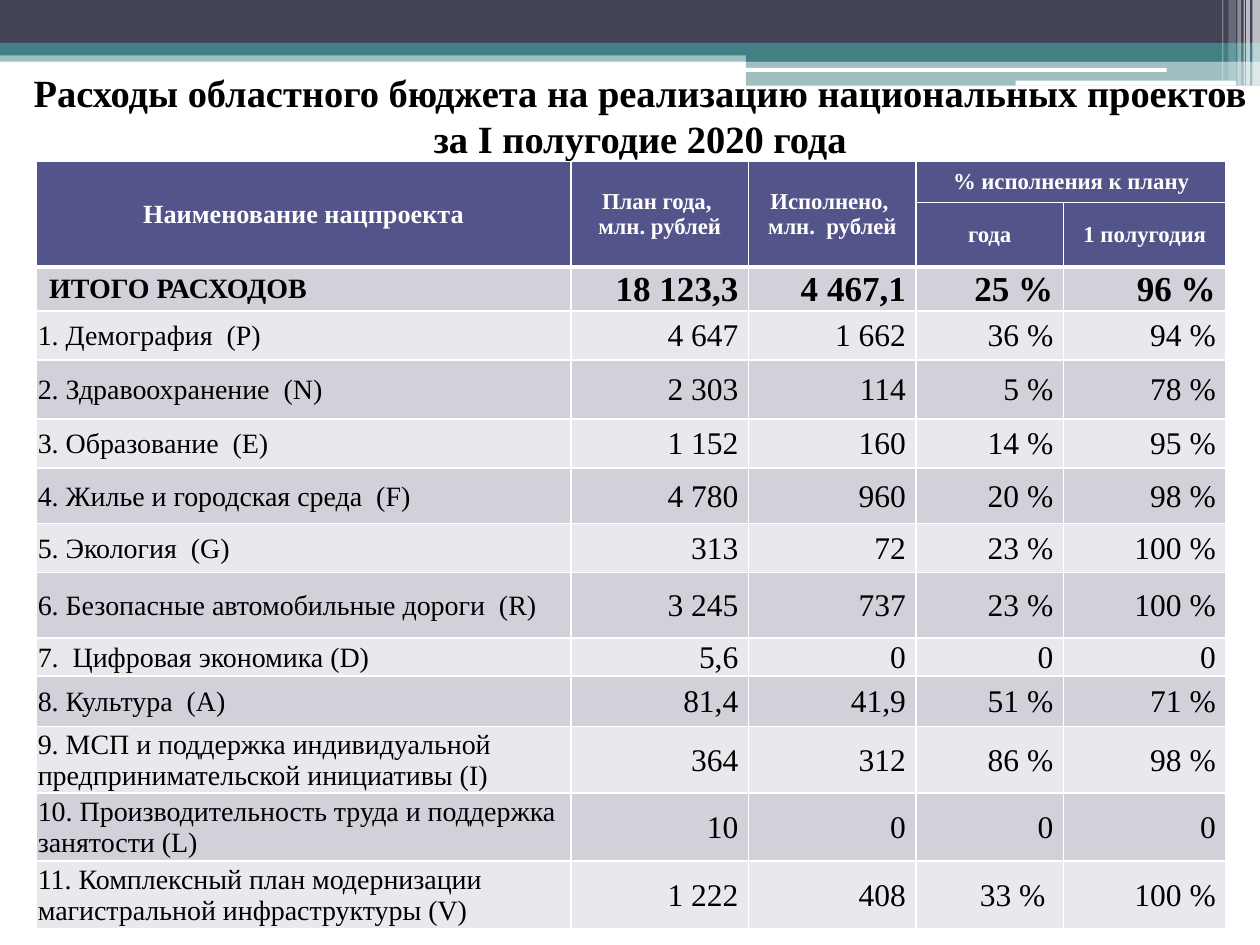
from lxml import etree
from pptx import Presentation
from pptx import util as u
from pptx.dml.color import RGBColor
from pptx.enum import shapes, text
from pptx.oxml import ns

FONT = "Times New Roman"
COLORS = {
    "navy": "424456", "teal": "438086", "white": "FFFFFF", "black": "000000",
    "header": "53548A", "dark": "D1D1DA", "light": "E9E9ED",
}

# left, top, width, height, colour, opacity in percent
BANDS = [
    (0, 0.4, 10, 0.09, "teal", 50),
    (0, 0, 10, 0.34, "navy", 100),
    (0, 0.34, 10, 0.1, "teal", 100),
    (5.92, 0.39, 4.08, 0.1, "teal", 100),
    (5.92, 0.48, 4.08, 0.2, "teal", 50),
]
PILLS = [
    (5.91, 0.54, 3.35, 0.03, "white", 100),
    (8.06, 0.64, 1.75, 0.04, "white", 100),
]
STRIPES = [
    (9.94, 0, 0.06, 0.68, "white", 65),
    (9.89, 0, 0.03, 0.68, "white", 65),
    (9.87, 0, 0.01, 0.68, "white", 60),
    (9.82, 0, 0.03, 0.68, "white", 40),
    (9.75, 0, 0.06, 0.64, "white", 20),
    (9.7, 0, 0.01, 0.64, "white", 30),
]

TITLE = ["Расходы областного бюджета на реализацию национальных проектов",
         "за I полугодие 2020 года"]
COL_WIDTHS = [4.24, 1.41, 1.33, 1.17, 1.29]
ROW_HEIGHTS = [0.33, 0.51, 0.34, 0.39, 0.47, 0.39, 0.44, 0.39, 0.52, 0.3,
               0.4, 0.53, 0.54, 0.54]
HEADER = [
    ["Наименование нацпроекта", "План года, \nмлн. рублей",
     "Исполнено, \nмлн.  рублей", "% исполнения к плану", ""],
    ["", "", "", "года", "1 полугодия"],
]
MERGES = [((0, 0), (1, 0)), ((0, 1), (1, 1)), ((0, 2), (1, 2)), ((0, 3), (0, 4))]
TOTAL = ["ИТОГО РАСХОДОВ", "18 123,3", "4 467,1", "25 %", "96 %"]
PROJECTS = [
    ["1. Демография  (P)", "4 647", "1 662", "36 %", "94 %"],
    ["2. Здравоохранение  (N)", "2 303", "114", "5 %", "78 %"],
    ["3. Образование  (E)", "1 152", "160", "14 %", "95 %"],
    ["4. Жилье и городская среда  (F)", "4 780", "960", "20 %", "98 %"],
    ["5. Экология  (G)", "313", "72", "23 %", "100 %"],
    ["6. Безопасные автомобильные дороги  (R)", "3 245", "737", "23 %", "100 %"],
    ["7.  Цифровая экономика (D)", "5,6", "0", "0", "0"],
    ["8. Культура  (A)", "81,4", "41,9", "51 %", "71 %"],
    ["9. МСП и поддержка индивидуальной предпринимательской инициативы (I)",
     "364", "312", "86 %", "98 %"],
    ["10. Производительность труда и поддержка занятости (L)",
     "10", "0", "0", "0"],
    ["11. Комплексный план модернизации магистральной инфраструктуры (V)",
     "1 222", "408", "33 % ", "100 %"],
]


def rgb(name):
    return RGBColor.from_string(COLORS[name])


def format_text(tf, size, bold, color, align, insets):
    """Apply one look to every paragraph of a text frame or cell."""
    for p in tf.paragraphs:
        p.alignment = align
        for font in [p.font] + [r.font for r in p.runs]:
            values = {"name": FONT, "size": u.Pt(size), "bold": bold}
            for key, value in values.items():
                setattr(font, key, value)
            font.color.rgb = rgb(color)
    return dict(zip(("margin_left", "margin_top", "margin_right", "margin_bottom"),
                    map(u.Inches, insets)))


def set_attributes(target, values):
    for key, value in values.items():
        setattr(target, key, value)


def add_decor(s, parts, kind):
    """Place borderless shapes, translucent where opacity is below 100."""
    for left, top, width, height, color, opacity in parts:
        sp = s.shapes.add_shape(kind, *map(u.Inches, (left, top, width, height)))
        sp.shadow.inherit = False
        sp.fill.solid()
        sp.fill.fore_color.rgb = rgb(color)
        sp.line.fill.background()
        if opacity < 100:
            clr = sp.element.spPr.find(".//" + ns.qn("a:srgbClr"))
            etree.SubElement(clr, ns.qn("a:alpha"), val=str(opacity * 1000))


def add_title(s, left, top, width, height):
    sp = s.shapes.title
    box = map(u.Inches, (left, top, width, height))
    set_attributes(sp, dict(zip(("left", "top", "width", "height"), box)))
    tf = sp.text_frame
    tf.text = "\n".join(TITLE)
    set_attributes(tf, {"word_wrap": True, "auto_size": text.MSO_AUTO_SIZE.NONE,
                        "vertical_anchor": text.MSO_ANCHOR.MIDDLE})
    set_attributes(tf, format_text(tf, 22, True, "black", text.PP_ALIGN.CENTER,
                                   (0.1, 0.05, 0.1, 0.05)))
    # Bring the title in front of the bands
    sp.element.getparent().append(sp.element)


def set_borders(cell, widths):
    tc_pr = cell._tc.get_or_add_tcPr()
    for side, width in zip("LRTB", widths):
        ln = etree.SubElement(tc_pr, ns.qn(f"a:ln{side}"), w=str(u.Pt(width)))
        fill = etree.SubElement(ln, ns.qn("a:solidFill"))
        etree.SubElement(fill, ns.qn("a:srgbClr"), val=COLORS["white"])


def cell_style(row, col):
    """Return fill, text look and insets for a table cell."""
    center, left, right = (text.PP_ALIGN.CENTER, text.PP_ALIGN.LEFT,
                           text.PP_ALIGN.RIGHT)
    wide, tight = (0.1, 0.05, 0.1, 0.05), (0.02, 0.04, 0.02, 0.04)
    if row < 2:
        look = (15, True, "white", center, wide)
        return "header", look if col == 0 else (13, True, "white", center, tight)
    total = row == 2
    fill = "light" if row % 2 else "dark"
    if col == 0:
        insets = wide if total else (0.01, 0.01, 0.01, 0)
        return fill, (16, total, "black", left, insets)
    return fill, (20 if total else 18, total, "black", right, (0.01, 0.01, 0.08, 0))


def add_budget_table(s, left, top):
    rows = HEADER + [TOTAL] + PROJECTS
    box = (left, top, sum(COL_WIDTHS), sum(ROW_HEIGHTS))
    table = s.shapes.add_table(len(rows), len(COL_WIDTHS),
                               *map(u.Inches, box)).table
    set_attributes(table, {"first_row": False, "horz_banding": False})
    for column, width in zip(table.columns, COL_WIDTHS):
        column.width = u.Inches(width)
    for row, height in zip(table.rows, ROW_HEIGHTS):
        row.height = u.Inches(height)

    for i, values in enumerate(rows):
        for j, value in enumerate(values):
            cell = table.cell(i, j)
            cell.text_frame.text = value
            fill, look = cell_style(i, j)
            side = 0.75 if i < 2 and 0 < j < 3 else 1
            above = 3 if i == 2 else 0.75 if i == 1 else 1
            below = 3 if i == 1 or (i == 0 and j < 3) else 0.75 if i == 0 else 1
            set_borders(cell, (side, side, above, below))
            cell.fill.solid()
            cell.fill.fore_color.rgb = rgb(fill)
            cell.vertical_anchor = text.MSO_ANCHOR.MIDDLE
            set_attributes(cell, format_text(cell.text_frame, *look))
    for first, last in MERGES:
        table.cell(*first).merge(table.cell(*last))


def main():
    prs = Presentation()
    prs.slide_width, prs.slide_height = u.Inches(10), u.Inches(7.5)
    s = prs.slides.add_slide(prs.slide_layouts[5])
    # Top decoration
    add_decor(s, BANDS, shapes.MSO_SHAPE.RECTANGLE)
    add_decor(s, PILLS, shapes.MSO_SHAPE.ROUNDED_RECTANGLE)
    add_decor(s, STRIPES, shapes.MSO_SHAPE.RECTANGLE)
    # Heading and table
    add_title(s, 0, 0.49, 10.16, 0.84)
    add_budget_table(s, 0.29, 1.28)
    prs.save("out.pptx")


if __name__ == "__main__":
    main()
